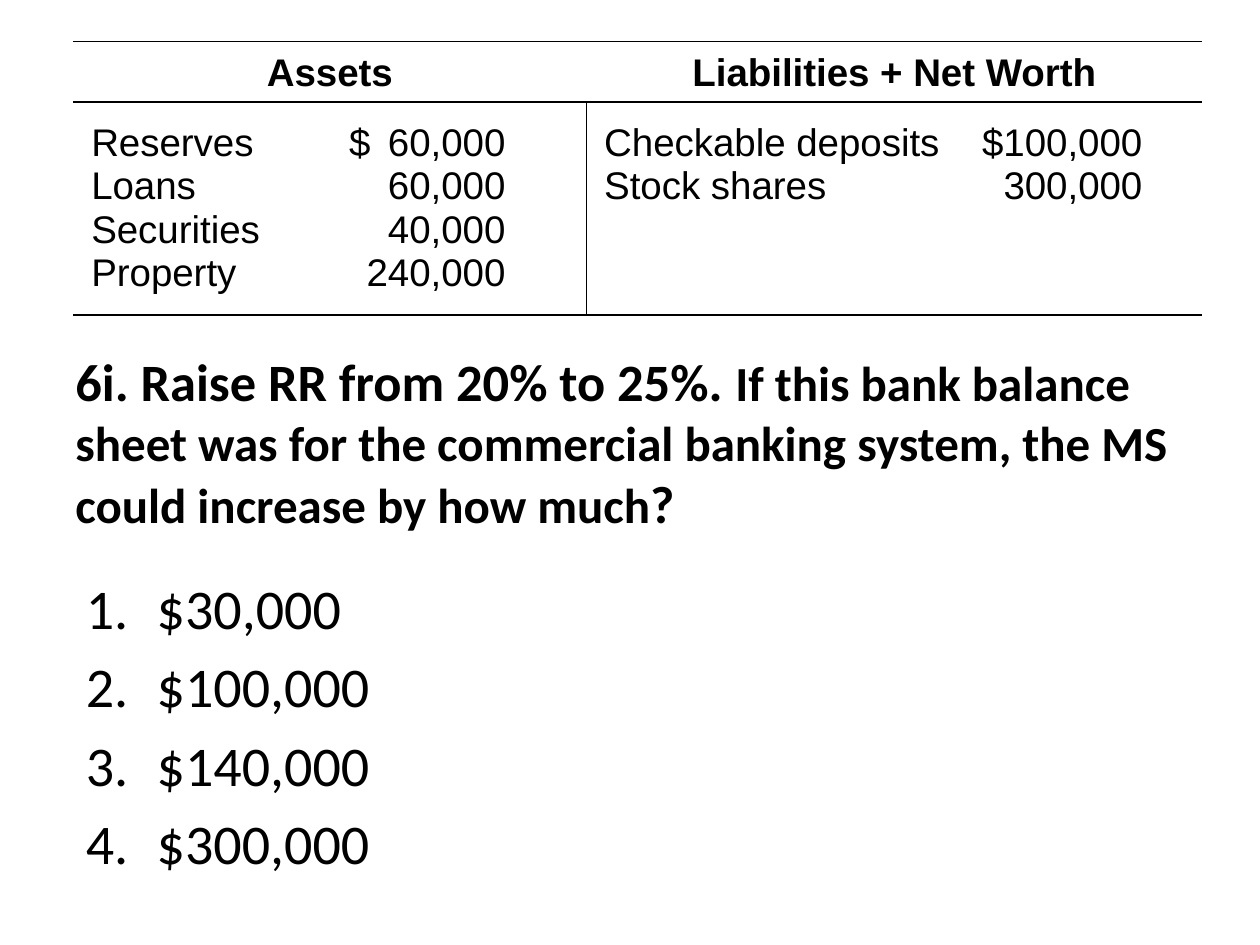
from dataclasses import dataclass

from lxml.etree import SubElement
from pptx import Presentation
from pptx.dml.color import RGBColor
from pptx.enum.text import MSO_ANCHOR, PP_ALIGN
from pptx.oxml.ns import qn
from pptx.util import Cm, Pt


@dataclass(frozen=True)
class Theme:
    ink: RGBColor = RGBColor(0, 0, 0)
    table_font: str = "Arial"
    body_font: str = "Calibri"
    table_size: int = 22
    question_size: int = 28
    emphasis_size: int = 30
    answer_size: int = 32
    rule_width: int = 1


theme = Theme()


def style_run(r, font, size, bold=False):
    r.font.name = font
    r.font.size = Pt(size)
    r.font.bold = bold
    r.font.color.rgb = theme.ink


def set_borders(cell, sides):
    tc_pr = cell._tc.get_or_add_tcPr()
    for side in "LRTB":
        visible = side in sides
        width = Pt(theme.rule_width) if visible else 0
        ln = SubElement(tc_pr, qn(f"a:ln{side}"), w=str(int(width)))
        if visible:
            fill = SubElement(ln, qn("a:solidFill"))
            SubElement(fill, qn("a:srgbClr"), val=str(theme.ink))
        else:
            SubElement(ln, qn("a:noFill"))
    cell.fill.background()


prs = Presentation()
prs.slide_width, prs.slide_height = Cm(25.4), Cm(19.05)
s = prs.slides.add_slide(prs.slide_layouts[6])

sp = s.shapes.add_textbox(Cm(1.27), Cm(6.78), Cm(22.86), Cm(4.24))
tf = sp.text_frame
tf.word_wrap = True
tf.vertical_anchor = MSO_ANCHOR.MIDDLE
p = tf.paragraphs[0]
question = [
    ("6i. Raise RR from 20% to 25%. ", theme.emphasis_size),
    ("If this bank balance sheet was for the commercial banking system, "
     "the MS could increase by how much", theme.question_size),
    ("?", theme.emphasis_size),
]
for text, size in question:
    r = p.add_run()
    r.text = text
    style_run(r, theme.body_font, size, bold=True)

sides = [
    ("Assets", 10.34, "RTB", [(5.2, "l"), (8.35, "r")],
     ["Reserves\t$\t60,000", "Loans\t\t60,000",
      "Securities\t\t40,000", "Property\t\t240,000"]),
    ("Liabilities + Net Worth", 12.42, "LTB", [(10.85, "r")],
     ["Checkable deposits\t$100,000", "Stock shares\t300,000"]),
]
table = s.shapes.add_table(2, 2, Cm(1.48), Cm(0.84), Cm(22.76), Cm(5.51)).table
table.first_row = table.horz_banding = False
table.rows[0].height, table.rows[1].height = Cm(1.22), Cm(4.29)
for col, (heading, width, borders, tabs, entries) in enumerate(sides):
    table.columns[col].width = Cm(width)
    head, body = table.cell(0, col), table.cell(1, col)
    head.margin_left = head.margin_right = body.margin_right = 0
    head.margin_top, head.margin_bottom = Cm(0.2), Cm(0.08)
    body.margin_left = Cm(0.36)
    body.margin_top, body.margin_bottom = Cm(0.4), Cm(0.15)
    set_borders(head, "TB")
    set_borders(body, borders)

    head.text_frame.text = heading
    p = head.text_frame.paragraphs[0]
    p.alignment = PP_ALIGN.CENTER
    style_run(p.runs[0], theme.table_font, theme.table_size, bold=True)

    body.text_frame.text = "\n".join(entries)
    for p in body.text_frame.paragraphs:
        tab_list = SubElement(p._p.get_or_add_pPr(), qn("a:tabLst"))
        for pos, align in tabs:
            SubElement(tab_list, qn("a:tab"), pos=str(int(Cm(pos))), algn=align)
        for r in p.runs:
            style_run(r, theme.table_font, theme.table_size)

sp = s.shapes.add_textbox(Cm(1.48), Cm(11.43), Cm(15.04), Cm(6.35))
tf = sp.text_frame
tf.word_wrap = True
tf.text = "\n".join(["$30,000", "$100,000", "$140,000", "$300,000"])
for p in tf.paragraphs:
    p.space_before = Pt(0.2 * theme.answer_size)
    p_pr = p._p.get_or_add_pPr()
    p_pr.set("marL", str(int(Cm(1.43))))
    p_pr.set("indent", str(int(Cm(-1.43))))
    SubElement(p_pr, qn("a:buFont"), typeface=theme.body_font)
    SubElement(p_pr, qn("a:buAutoNum"), type="arabicPeriod")
    style_run(p.runs[0], theme.body_font, theme.answer_size)

prs.save("out.pptx")
